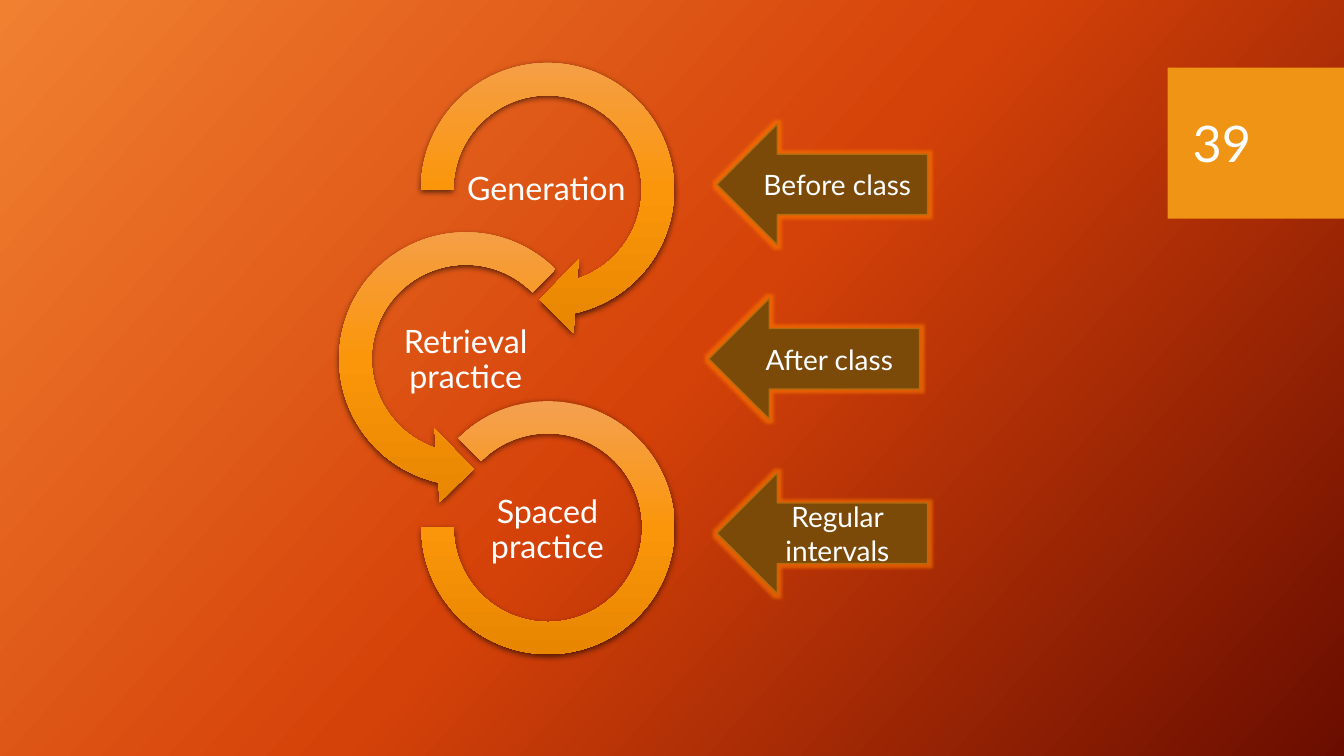
from lxml.etree import SubElement
from pptx import Presentation
from pptx.dml.color import RGBColor
from pptx.enum.shapes import MSO_SHAPE as Kind
from pptx.enum.text import MSO_ANCHOR as Anchor, PP_ALIGN as Align
from pptx.oxml.ns import qn
from pptx.util import Inches, Pt
from copy import deepcopy

FONT = "Lato"
WHITE = RGBColor(0xFF, 0xFF, 0xFF)
AMBER = RGBColor(0xF0, 0x94, 0x15)
BROWN = RGBColor(0x7B, 0x4A, 0x08)
EDGE = RGBColor(0xB2, 0x6D, 0x10)
GLOW = RGBColor(0xFF, 0x7A, 0x00)
BLACK = RGBColor(0, 0, 0)
BACK = [RGBColor(0xF1, 0x80, 0x31), RGBColor(0xD5, 0x42, 0x09),
        RGBColor(0x6A, 0x0D, 0x00)]
RING = [RGBColor(0xF4, 0xA0, 0x50), RGBColor(0xFB, 0x96, 0x0A),
        RGBColor(0xE8, 0x86, 0x00)]

CYCLE = [
    ("Generation", Kind.CIRCULAR_ARROW, (3.97, 0.42, 2.92),
     (0.11, 11.42, 45, 108, 0.125), (4.61, 1.48)),
    ("Retrieval practice", Kind.LEFT_CIRCULAR_ARROW, (3.16, 2.1, 2.92),
     (0.11, 11.42, 63, 189, 0.125), (3.81, 3.17)),
    ("Spaced practice", Kind.BLOCK_ARC, (4.18, 3.98, 2.51),
     (135, 108, 0.127), (4.62, 4.86)),
]
TIMES = [("Before class", 7.11), ("After class", 7.03),
         ("Regular intervals", 7.11)]


def blend(fill, root, colors, angle):
    fill.gradient()
    fill.gradient_angle = 360 - angle
    stops = root.xpath(".//a:gsLst")[0]
    stops.append(deepcopy(stops[-1]))
    for i, (stop, color) in enumerate(zip(fill.gradient_stops, colors)):
        stop.position = i / 2
        stop.color.rgb = color


def effect(shape, name, color, alpha, **attrs):
    shape.shadow.inherit = False
    holder = shape.element.spPr.find(qn("a:effectLst"))
    item = SubElement(holder, qn(name), {k: str(v) for k, v in attrs.items()})
    tint = SubElement(item, qn("a:srgbClr"), val=str(color))
    SubElement(tint, qn("a:alpha"), val=str(alpha * 1000))


def write(shape, text, size, align=Align.CENTER):
    frame = shape.text_frame
    frame.word_wrap = True
    frame.vertical_anchor = Anchor.MIDDLE
    para = frame.paragraphs[0]
    para.text = text
    para.alignment = align
    para.font.name = FONT
    para.font.size = Pt(size)
    para.font.color.rgb = WHITE
    return frame


def add_ring(shapes, kind, place, adjust):
    left, top, size = map(Inches, place)
    ring = shapes.add_shape(kind, left, top, size, size)
    for i, value in enumerate(adjust):
        ring.adjustments[i] = value
    blend(ring.fill, ring.element, RING, 90)
    ring.line.fill.background()
    effect(ring, "a:outerShdw", BLACK, 63, blurRad=Pt(4.5), dist=Pt(1.5),
           dir=90 * 60000, algn="ctr", rotWithShape=0)


def add_label(shapes, text, left, top):
    box = shapes.add_textbox(Inches(left), Inches(top), Inches(1.62), Inches(0.81))
    frame = write(box, text, 23)
    frame.margin_left = frame.margin_right = Inches(0.02)
    frame.margin_top = frame.margin_bottom = Inches(0.02)
    frame.paragraphs[0].line_spacing = 0.9


def add_arrow(shapes, text, left, top):
    arrow = shapes.add_shape(Kind.LEFT_ARROW, Inches(left), Inches(top),
                             Inches(2.09), Inches(1.2))
    arrow.fill.solid()
    arrow.fill.fore_color.rgb = BROWN
    arrow.line.color.rgb = EDGE
    arrow.line.width = Pt(1)
    effect(arrow, "a:glow", GLOW, 60, rad=Pt(5))
    write(arrow, text, 20)


def add_number(shapes, text):
    tile = shapes.add_shape(Kind.RECTANGLE, Inches(11.58), Inches(0.67),
                            Inches(1.75), Inches(1.5))
    tile.shadow.inherit = False
    tile.fill.solid()
    tile.fill.fore_color.rgb = AMBER
    tile.line.fill.background()
    box = shapes.add_textbox(Inches(11.73), Inches(0.82), Inches(1.26), Inches(1.19))
    write(box, text, 36, Align.LEFT)


def main():
    deck = Presentation()
    deck.slide_width = Inches(13.33)
    deck.slide_height = Inches(7.5)
    slide = deck.slides.add_slide(deck.slide_layouts[6])
    blend(slide.background.fill, slide.element, BACK, 42)
    add_number(slide.shapes, "39")
    group = slide.shapes.add_group_shape()
    for text, kind, place, adjust, spot in CYCLE:
        add_ring(group.shapes, kind, place, adjust)
        add_label(group.shapes, text, *spot)
    for i, (text, left) in enumerate(TIMES):
        add_arrow(slide.shapes, text, left, 1.23 + 1.73 * i)
    deck.save("out.pptx")


if __name__ == "__main__":
    main()
